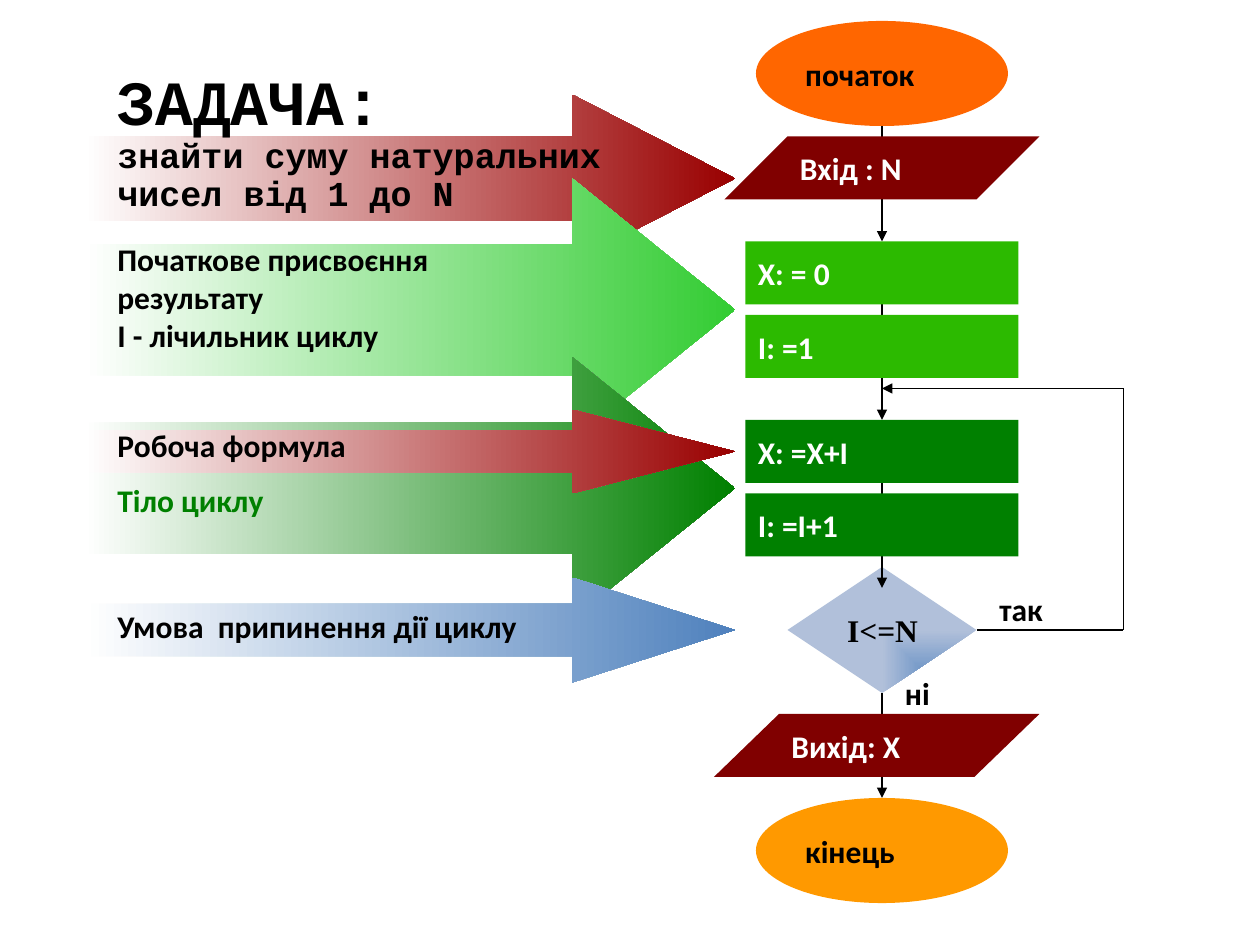
import pptx
import pptx.dml.color
import pptx.enum.shapes
import pptx.enum.text
import pptx.oxml
import pptx.oxml.ns
import pptx.util

SHAPES = pptx.enum.shapes.MSO_SHAPE
MIDDLE = pptx.enum.text.MSO_ANCHOR.MIDDLE
TOP = pptx.enum.text.MSO_ANCHOR.TOP
BLACK, WHITE = "000000", "FFFFFF"
CRIMSON, MAROON, GREEN, BLUE = "990000", "800000", "008000", "4F81BD"
SCALE = 7620


def px(length):
    return pptx.util.Emu(length * SCALE)


def rgb(value):
    return pptx.dml.color.RGBColor.from_string(value)


class Flowchart:
    font = "Calibri"
    size = 18
    head_length = 155

    def __init__(self, slide):
        self.slide = slide

    def label(self, frame, lines, color, font=None, anchor=MIDDLE, wrap=False):
        frame.text = "\n".join(lines)
        frame.word_wrap = wrap
        frame.vertical_anchor = anchor
        for paragraph in frame.paragraphs:
            paragraph.alignment = pptx.enum.text.PP_ALIGN.LEFT
            for run in paragraph.runs:
                run.font.name = font or self.font
                run.font.size = pptx.util.Pt(self.size)
                run.font.bold = True
                run.font.color.rgb = rgb(color)

    def shape(self, kind, left, top, width, height):
        shape = self.slide.shapes.add_shape(kind, px(left), px(top), px(width), px(height))
        shape.shadow.inherit = False
        shape.line.fill.background()
        return shape

    def gradient(self, shape, start, end):
        shape.fill.gradient()
        shape.fill.gradient_angle = 0
        for stop, color, position in zip(shape.fill.gradient_stops, (start, end), (0, 1)):
            stop.color.rgb = rgb(color)
            stop.position = position

    def block(self, kind, left, top, width, height, caption, fill, color=WHITE):
        block = self.shape(kind, left, top, width, height)
        block.fill.solid()
        block.fill.fore_color.rgb = rgb(fill)
        self.label(block.text_frame, [caption], color)

    def decision(self, left, top, width, height, caption):
        decision = self.shape(SHAPES.FLOWCHART_DECISION, left, top, width, height)
        self.gradient(decision, BLUE, "B1C0DA")
        linear = decision._element.spPr.find(".//" + pptx.oxml.ns.qn("a:lin"))
        corner = pptx.oxml.parse_xml(
            f'<a:path {pptx.oxml.ns.nsdecls("a")} path="rect">'
            '<a:fillToRect l="100000" t="100000"/></a:path>')
        linear.getparent().replace(linear, corner)
        self.label(decision.text_frame, [caption], BLACK, "Times New Roman")

    def banner(self, top, height, color):
        banner = self.shape(SHAPES.RIGHT_ARROW, 80, top, 620, height)
        banner.adjustments[1] = self.head_length / height
        self.gradient(banner, WHITE, color)

    def line(self, start, end, arrow=True, shapes=None):
        line = (shapes or self.slide.shapes).add_connector(
            pptx.enum.shapes.MSO_CONNECTOR.STRAIGHT, *map(px, start + end))
        line.line.color.rgb = rgb(BLACK)
        line.line.width = pptx.util.Pt(1)
        if arrow:
            tail = pptx.oxml.parse_xml(
                f'<a:tailEnd {pptx.oxml.ns.nsdecls("a")} type="triangle"/>')
            line.line._get_or_add_ln().append(tail)
        effects = pptx.oxml.parse_xml(f'<a:effectLst {pptx.oxml.ns.nsdecls("a")}/>')
        line._element.spPr.append(effects)

    def text(self, left, top, width, height, lines, color=BLACK, **style):
        frame = self.slide.shapes.add_textbox(
            px(left), px(top), px(width), px(height)).text_frame
        self.label(frame, lines, color, **style)
        frame.auto_size = pptx.enum.text.MSO_AUTO_SIZE.SHAPE_TO_FIT_TEXT
        return frame

    def note(self, top, height, lines, color=BLACK):
        self.text(100, top, 430, height, lines, color, anchor=TOP, wrap=True)

    def title(self, heading, task):
        frame = self.text(100, 54, 510, 156, [heading, task],
                          font="Courier New", wrap=True)
        for paragraph, size in zip(frame.paragraphs, (36, 20)):
            paragraph.runs[0].font.size = pptx.util.Pt(size)
        frame.paragraphs[1].line_spacing = 0.9


def main():
    deck = pptx.Presentation()
    deck.slide_width, deck.slide_height = px(1200), px(900)
    chart = Flowchart(deck.slides.add_slide(deck.slide_layouts[6]))
    axis = 840

    for top, height, color in ((90, 160, CRIMSON), (170, 250, "33CC33"), (340, 250, GREEN)):
        chart.banner(top, height, color)

    chart.decision(750, 540, 180, 120, "I<=N")
    for top, bottom in ((450, 560), (290, 400), (110, 230), (660, 760)):
        chart.line((axis, top), (axis, bottom))

    chart.title("ЗАДАЧА:", "знайти суму натуральних чисел від 1 до N")

    for top, caption, fill in ((20, "початок", "FF6600"), (760, "кінець", "FF9900")):
        chart.block(SHAPES.OVAL, 720, top, 240, 100, caption, fill, BLACK)
    for left, top, width, caption in ((690, 130, 300, "Вхід : N"), (680, 680, 310, "Вихід: X")):
        chart.block(SHAPES.FLOWCHART_DATA, left, top, width, 60, caption, MAROON)
    for top, caption, fill in ((230, "X: = 0", "2CBA00"), (300, "I: =1", "2CBA00"),
                               (400, "X: =X+I", GREEN), (470, "I: =I+1", GREEN)):
        chart.block(SHAPES.RECTANGLE, 710, top, 260, 60, caption, fill)

    chart.text(940, 550, 86, 60, ["так"])
    chart.text(850, 630, 59, 60, ["ні"])

    loop = chart.slide.shapes.add_group_shape().shapes
    chart.line((1070, 370), (axis, 370), shapes=loop)
    chart.line((1070, 370), (1070, 600), arrow=False, shapes=loop)
    chart.line((930, 600), (1070, 600), arrow=False, shapes=loop)

    chart.note(223, 120, ["Початкове присвоєння результату", "I - лічильник циклу"])
    chart.note(452, 48, ["Тіло циклу"], GREEN)
    chart.banner(550, 100, BLUE)
    chart.note(572, 48, ["Умова  припинення дії циклу"])
    chart.banner(390, 80, CRIMSON)
    chart.note(400, 48, ["Робоча формула"])

    deck.save("out.pptx")


if __name__ == "__main__":
    main()
